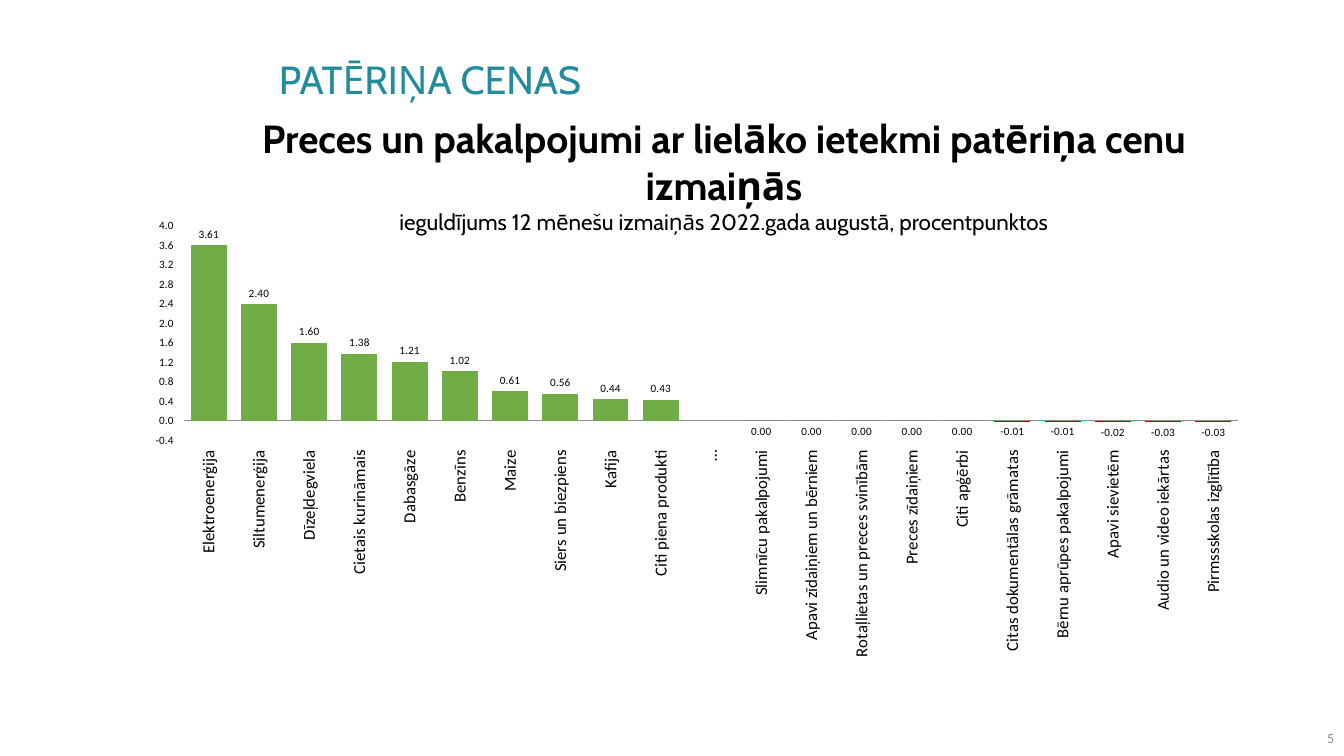
from dataclasses import dataclass

from lxml import etree
from pptx import Presentation
from pptx import util as u
from pptx.chart.data import CategoryChartData
from pptx.dml.color import RGBColor
from pptx.enum import chart as ch
from pptx.enum import text
from pptx.oxml.ns import qn

PX = 9525  # EMU per px, 96 px to the inch
RISE, FALL, BLACK, GREY, TEAL = "70AD47", "C00000", "000000", "8C8C8C", "228B9D"


@dataclass
class Box:
    left: int
    top: int
    width: int
    height: int

    def emu(self) -> list[int]:
        return [v * PX for v in (self.left, self.top, self.width, self.height)]


@dataclass
class Line:
    words: str
    size: int
    color: str = BLACK
    font: str = "Cabin"
    bold: bool = False
    align: text.PP_ALIGN = text.PP_ALIGN.LEFT
    spacing: float = 1.0


PRICES = [
    ("Elektroenerģija", 3.61),
    ("Siltumenerģija", 2.40),
    ("Dīzeļdegviela", 1.60),
    ("Cietais kurināmais", 1.38),
    ("Dabasgāze", 1.21),
    ("Benzīns", 1.02),
    ("Maize", 0.61),
    ("Siers un biezpiens", 0.56),
    ("Kafija", 0.44),
    ("Citi piena produkti", 0.43),
    ("…", None),
    ("Slimnīcu pakalpojumi", 0),
    ("Apavi zīdaiņiem un bērniem", 0),
    ("Rotaļlietas un preces svinībām", 0),
    ("Preces zīdaiņiem", 0),
    ("Citi apģērbi", 0),
    ("Citas dokumentālas grāmatas", -0.01),
    ("Bērnu aprūpes pakalpojumi", -0.01),
    ("Apavi sievietēm", -0.02),
    ("Audio un video iekārtas", -0.03),
    ("Pirmssskolas izglītība", -0.03),
]


def rgb(color: str) -> RGBColor:
    return RGBColor.from_string(color)


def set_font(font, size: int, color: str = BLACK, name: str = "Calibri", bold: bool = False) -> None:
    font.size, font.name, font.bold = u.Pt(size), name, bold
    font.color.rgb = rgb(color)


def write(sp, box: Box, lines: list[Line], anchor=text.MSO_ANCHOR.TOP) -> None:
    sp.left, sp.top, sp.width, sp.height = box.emu()
    tf = sp.text_frame
    tf.word_wrap = True
    tf.auto_size = text.MSO_AUTO_SIZE.NONE
    tf.vertical_anchor = anchor
    for i, line in enumerate(lines):
        p = tf.add_paragraph() if i else tf.paragraphs[0]
        p.text = line.words
        p.alignment, p.line_spacing = line.align, line.spacing
        set_font(p.font, line.size, line.color, line.font, line.bold)


def set_plot_area(chart, x: float, y: float, w: float, h: float) -> None:
    """Place the inner plot area by fractions of the chart."""
    area = chart.plots[0]._element.getparent()
    for old in area.findall(qn("c:layout")):
        area.remove(old)
    layout = etree.Element(qn("c:layout"))
    manual = etree.SubElement(layout, qn("c:manualLayout"))
    settings = dict(layoutTarget="inner", xMode="edge", yMode="edge", x=x, y=y, w=w, h=h)
    for tag, value in settings.items():
        etree.SubElement(manual, qn(f"c:{tag}")).set("val", str(value))
    area.insert(0, layout)


def add_price_chart(slide, box: Box) -> None:
    data = CategoryChartData(number_format="0.00")
    data.categories = [name for name, _ in PRICES]
    data.add_series("Series 1", [value for _, value in PRICES])
    frame = slide.shapes.add_chart(ch.XL_CHART_TYPE.COLUMN_CLUSTERED, *box.emu(), data)
    chart = frame.chart
    chart.has_legend = chart.has_title = False
    set_font(chart.font, 8)
    set_plot_area(chart, 0.05, 0.015, 0.95, 0.48)

    # Axes
    cat = chart.category_axis
    cat.tick_label_position = ch.XL_TICK_LABEL_POSITION.LOW
    cat.major_tick_mark = ch.XL_TICK_MARK.NONE
    cat.format.line.color.rgb = rgb(GREY)
    cat.format.line.width = u.Pt(0.75)
    set_font(cat.tick_labels.font, 12)
    body = cat._element.find(f"{qn('c:txPr')}/{qn('a:bodyPr')}")
    body.set("rot", "-5400000")
    body.set("vert", "horz")
    val = chart.value_axis
    val.minimum_scale, val.maximum_scale, val.major_unit = -0.4, 4, 0.4
    val.has_major_gridlines = False
    val.format.line.fill.background()
    val.tick_labels.number_format = "0.0"
    val.tick_labels.number_format_is_linked = False

    # Columns and their labels
    plot = chart.plots[0]
    plot.gap_width = 40
    plot.vary_by_categories = False
    series = plot.series[0]
    series.invert_if_negative = False
    series.format.fill.solid()
    series.format.fill.fore_color.rgb = rgb(FALL)
    labels = series.data_labels
    labels.show_value = True
    labels.number_format = "0.00"
    labels.number_format_is_linked = False
    labels.position = ch.XL_LABEL_POSITION.OUTSIDE_END
    set_font(labels.font, 8)
    for i, (_, value) in enumerate(PRICES):
        if value is None:
            continue
        if value > 0:
            fill = series.points[i].format.fill
            fill.solid()
            fill.fore_color.rgb = rgb(RISE)
        elif value == 0:  # keeps the label below the axis
            label = series.points[i].data_label
            set_font(label.font, 8)
            label.position = ch.XL_LABEL_POSITION.INSIDE_END


def main() -> None:
    prs = Presentation()
    prs.slide_width, prs.slide_height = 1280 * PX, 720 * PX
    slide = prs.slides.add_slide(prs.slide_layouts[5])

    # Title
    write(slide.shapes.title, Box(256, 53, 935, 51),
          [Line("PATĒRIŅA CENAS", 28, TEAL, spacing=0.9)])

    # Slide number
    number = Box(1191, 687, 89, 32)
    write(slide.shapes.add_textbox(*number.emu()), number,
          [Line("5", 10, GREY, "Calibri", align=text.PP_ALIGN.RIGHT)], text.MSO_ANCHOR.MIDDLE)

    # Chart heading
    heading = Box(199, 104, 981, 81)
    center = text.PP_ALIGN.CENTER
    write(slide.shapes.add_textbox(*heading.emu()), heading, [
        Line("Preces un pakalpojumi ar lielāko ietekmi patēriņa cenu izmaiņās", 28,
             bold=True, align=center),
        Line("ieguldījums 12 mēnešu izmaiņās 2022.gada augustā, procentpunktos", 16, align=center),
    ])

    # Chart
    add_price_chart(slide, Box(122, 209, 1058, 425))

    prs.save("out.pptx")


if __name__ == "__main__":
    main()
